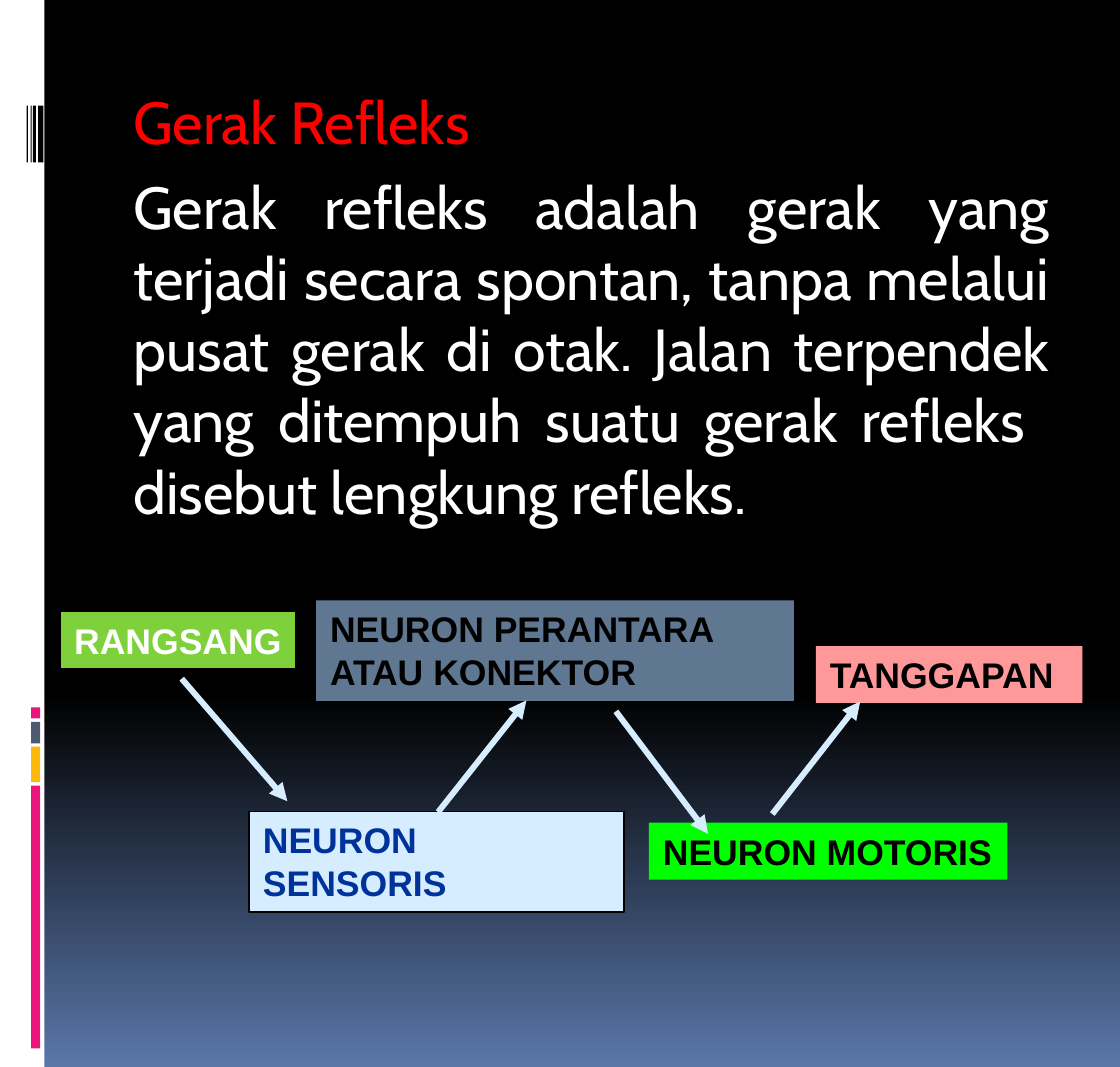
from lxml import etree
from pptx import Presentation
from pptx.dml.color import RGBColor
from pptx.enum.shapes import MSO_CONNECTOR, MSO_SHAPE
from pptx.enum.text import MSO_ANCHOR, PP_ALIGN
from pptx.oxml.ns import qn
from pptx.util import Pt

RECT = MSO_SHAPE.RECTANGLE
STRAIGHT = MSO_CONNECTOR.STRAIGHT
LEFT, JUSTIFY = PP_ALIGN.LEFT, PP_ALIGN.JUSTIFY
TOP = MSO_ANCHOR.TOP


def rgb(code):
    return RGBColor.from_string(code)


def add_rect(s, left, top, width, height, fill, line=None):
    sp = s.shapes.add_shape(RECT, Pt(left), Pt(top), Pt(width), Pt(height))
    sp.shadow.inherit = False
    sp.fill.solid()
    sp.fill.fore_color.rgb = rgb(fill)
    if line:
        sp.line.color.rgb = rgb(line)
        sp.line.width = Pt(0.75)
    else:
        sp.line.fill.background()
    return sp


prs = Presentation()
prs.slide_width, prs.slide_height = Pt(567), Pt(540)
s = prs.slides.add_slide(prs.slide_layouts[6])

# Background: black down to 65 %, then fading to blue
bg = s.background.fill
bg.gradient()
bg.gradient_angle = 270
for stop, position, color in zip(bg.gradient_stops, (0.65, 1), ("000000", "5A77A9")):
    stop.position = position
    stop.color.rgb = rgb(color)

# White side strip
add_rect(s, 0, 0, 22.5, 540, "FFFFFF")

# Coloured bars on the strip
for top, height, color in [
    (397.6, 133, "EA157A"),
    (377.8, 18, "FEB80A"),
    (365.3, 11, "4E5B6F"),
    (358, 5.6, "EA157A"),
]:
    add_rect(s, 15.8, top, 4.5, height, color)

# Barcode stripes on the strip
for left, width in [(19.3, 2.7), (16.7, 1.5), (15.5, 0.6), (13.5, 0.7)]:
    add_rect(s, left, 53.5, width, 28.8, "000000")

# Heading and explanation
sp = s.shapes.add_textbox(Pt(60.5), Pt(39.6), Pt(478), Pt(265))
tf = sp.text_frame
tf.word_wrap = True
paragraphs = [
    ("Gerak Refleks", "FF0000"),
    ("Gerak refleks adalah gerak yang terjadi secara spontan, tanpa melalui "
     "pusat gerak di otak. Jalan terpendek yang ditempuh suatu gerak refleks  "
     "disebut lengkung refleks.", "FFFFFF"),
]
for i, (text, color) in enumerate(paragraphs):
    p = tf.add_paragraph() if i else tf.paragraphs[0]
    p.text = text
    p.alignment = JUSTIFY
    p.space_before = Pt(7)
    p.font.size = Pt(30)
    p.font.name = "Cabin"
    p.font.color.rgb = rgb(color)

# Stages of the reflex arc
for text, left, top, width, height, fill, color, line in [
    ("RANGSANG", 30.5, 309.6, 119.5, 28.8, "7FD13B", "FFFFFF", "000000"),
    ("NEURON SENSORIS", 126, 410.6, 190, 51, "D6ECFF", "003399", "000000"),
    ("NEURON PERANTARA ATAU KONEKTOR", 160, 303.8, 242, 51, "5F7791", "000000", None),
    ("NEURON MOTORIS", 328.5, 416.4, 181.5, 28.8, "00FF00", "000000", None),
    ("TANGGAPAN", 413, 327, 135, 28.8, "FF9999", "000000", None),
]:
    sp = add_rect(s, left, top, width, height, fill, line)
    tf = sp.text_frame
    tf.word_wrap = True
    tf.vertical_anchor = TOP
    tf.text = text
    p = tf.paragraphs[0]
    p.alignment = LEFT
    p.font.size = Pt(18)
    p.font.bold = True
    p.font.name = "Arial"
    p.font.color.rgb = rgb(color)

# Arrows between the stages
for x1, y1, x2, y2 in [
    (92, 343.5, 145.5, 405.5),
    (221.8, 411, 266.5, 354.5),
    (311.8, 360, 358.5, 422),
    (391, 412, 435.5, 355),
]:
    c = s.shapes.add_connector(STRAIGHT, Pt(x1), Pt(y1), Pt(x2), Pt(y2))
    c.line.color.rgb = rgb("D6ECFF")
    c.line.width = Pt(3)
    etree.SubElement(c.line._get_or_add_ln(), qn("a:tailEnd"), type="triangle")
    etree.SubElement(c._element.spPr, qn("a:effectLst"))

prs.save("out.pptx")
